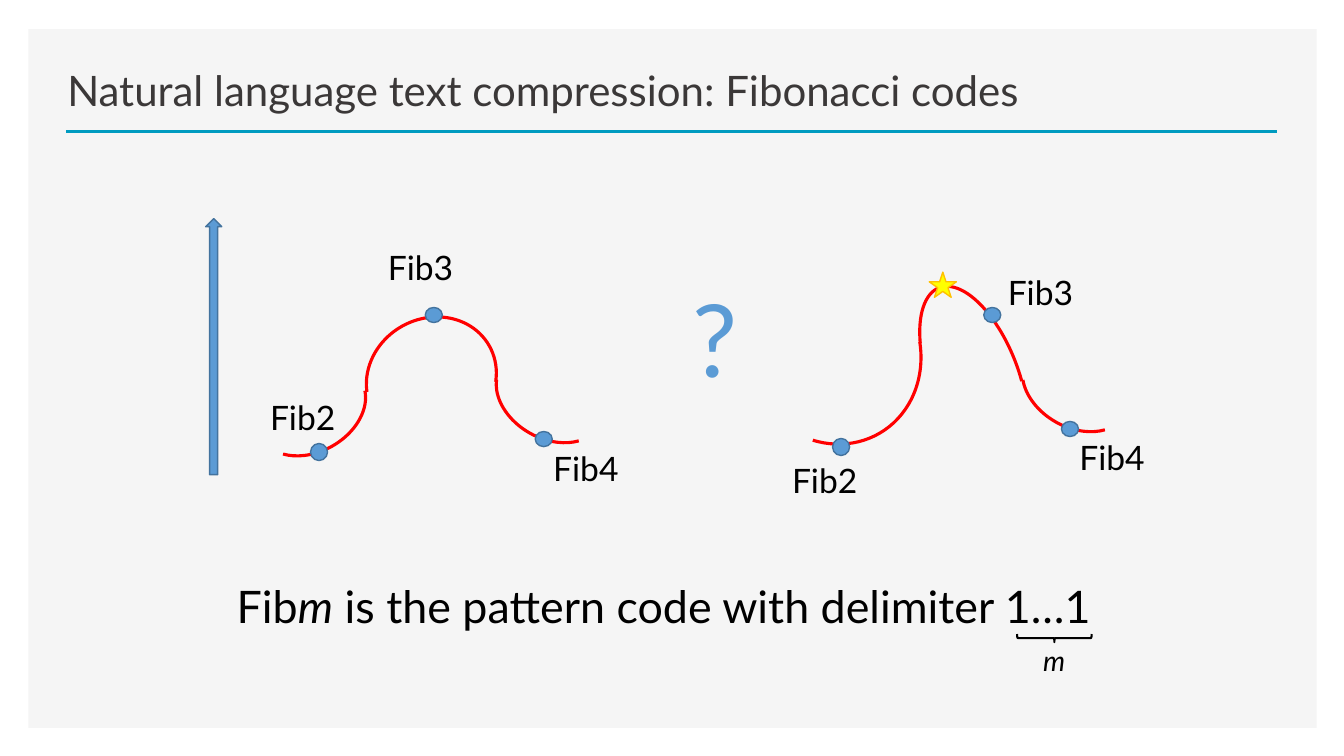
from lxml.etree import SubElement
from pptx import Presentation
from pptx.dml.color import RGBColor
from pptx.enum.shapes import MSO_CONNECTOR, MSO_SHAPE
from pptx.enum.text import MSO_ANCHOR, PP_ALIGN
from pptx.oxml.ns import qn
from pptx.util import Pt


def color(hex_string):
    return RGBColor.from_string(hex_string)


class SlideBuilder:
    font_name = "Lato"
    black, blue, blue_edge, red = "000000", "5B9BD5", "43739E", "FF0000"

    def __init__(self, presentation):
        self.slide = presentation.slides.add_slide(presentation.slide_layouts[6])

    def shape(self, kind, box, fill=None, line=None, width=1, rotation=0, flip="", adjust=()):
        shape = self.slide.shapes.add_shape(kind, *map(Pt, box))
        shape.shadow.inherit = False
        if fill:
            shape.fill.solid()
            shape.fill.fore_color.rgb = color(fill)
        else:
            shape.fill.background()
        if line:
            shape.line.color.rgb = color(line)
            shape.line.width = Pt(width)
        else:
            shape.line.fill.background()
        for index, value in enumerate(adjust):
            shape.adjustments[index] = value
        shape.rotation = rotation
        for axis in flip:
            shape._element.spPr.xfrm.set("flip" + axis, "1")
        return shape

    def line(self, start, end, line, width):
        connector = self.slide.shapes.add_connector(
            MSO_CONNECTOR.STRAIGHT, *map(Pt, (*start, *end)))
        connector.line.color.rgb = color(line)
        connector.line.width = Pt(width)
        SubElement(connector._element.spPr, qn("a:effectLst"))

    def text(self, box, runs, size, fill=black, align=PP_ALIGN.LEFT,
             anchor=MSO_ANCHOR.TOP, wrap=True):
        """Each run is a pair of wording and italic flag."""
        frame = self.slide.shapes.add_textbox(*map(Pt, box)).text_frame
        frame.word_wrap = wrap
        frame.vertical_anchor = anchor
        paragraph = frame.paragraphs[0]
        paragraph.alignment = align
        for wording, italic in runs:
            run = paragraph.add_run()
            run.text = wording
            run.font.color.rgb = color(fill)
            formats = {"name": self.font_name, "size": Pt(size), "italic": italic}
            for name, value in formats.items():
                setattr(run.font, name, value)

    def arc(self, box, rotation, flip, start, end):
        self.shape(MSO_SHAPE.ARC, box, None, self.red, 2.25, rotation, flip, (start, end))

    def code(self, name, dot, label, height=10.8):
        self.shape(MSO_SHAPE.OVAL, (*dot, 12.2, height), self.blue, self.blue_edge)
        self.text((*label, 103, 36), [(name, False)], 24)


def main():
    presentation = Presentation()
    presentation.slide_width, presentation.slide_height = Pt(960), Pt(540)
    builder = SlideBuilder(presentation)

    # Panel, title and rule
    builder.shape(MSO_SHAPE.RECTANGLE, (20.2, 20.9, 920.2, 499), "F5F5F5")
    builder.line((47.5, 94.1), (912.2, 94.1), "009BC0", 2)
    builder.text((41, 35.3, 880, 50.4),
                 [("Natural language text compression: Fibonacci codes", False)],
                 30, "3B3838", anchor=MSO_ANCHOR.BOTTOM)

    # Curves: box, rotation, flip, start and end of the arc
    foot = (82.1, 59.8)
    curves = [
        ((352.1, 253.4, *foot), 209.4, "H", 115.24, 199.27),
        ((181.4, 262.8, *foot), 150.6, "", 113.84, 199.27),
        ((260.6, 227.5, 95, 85.7), 150.6, "HV", 118.53, 19.3),
        ((529.9, 178.6, 126, 140.4), 149.5, "", 123.76, 186.69),
        ((727.9, 245.5, *foot), 209.4, "H", 122.05, 199.27),
        ((663.8, 200.9, 63.4, 136.8), 158.8, "HV", 140.28, 15.6),
    ]
    for curve in curves:
        builder.arc(*curve)

    # Codes on the left curve, then on the right one
    builder.code("Fib2", (221.8, 316.8), (185.8, 280.1), 12.2)
    builder.code("Fib3", (303.8, 219.6), (270, 172.8))
    builder.code("Fib4", (382.3, 308.2), (388.1, 316.1))
    builder.code("Fib2", (594.7, 313.2), (558.7, 324.7), 12.2)
    builder.code("Fib3", (702.7, 219.6), (712.8, 190.8))
    builder.code("Fib4", (758.2, 301), (763.9, 308.9))

    # Axis arrow, question mark and peak
    builder.shape(MSO_SHAPE.UP_ARROW, (146.9, 156.2, 11.5, 182.9),
                  builder.blue, builder.blue_edge)
    builder.text((486.7, 194.4, 48.2, 94.3), [("?", False)], 72, builder.blue,
                 PP_ALIGN.CENTER, wrap=False)
    builder.shape(MSO_SHAPE.STAR_5_POINT, (663.8, 194.4, 19.4, 18), "FFFF00", "FFC000")

    # Definition with the braced delimiter
    builder.text((162, 409.7, 704.9, 46.1),
                 [("Fib", False), ("m", True),
                  (" is the pattern code with delimiter 1…1", False)], 32)
    builder.shape(MSO_SHAPE.RIGHT_BRACE, (750.2, 429.1, 5.8, 53.3),
                  None, builder.black, 1.5, 90)
    builder.text((738, 455.8, 59.8, 31.7), [("m", True)], 20)

    presentation.save("out.pptx")


if __name__ == "__main__":
    main()
